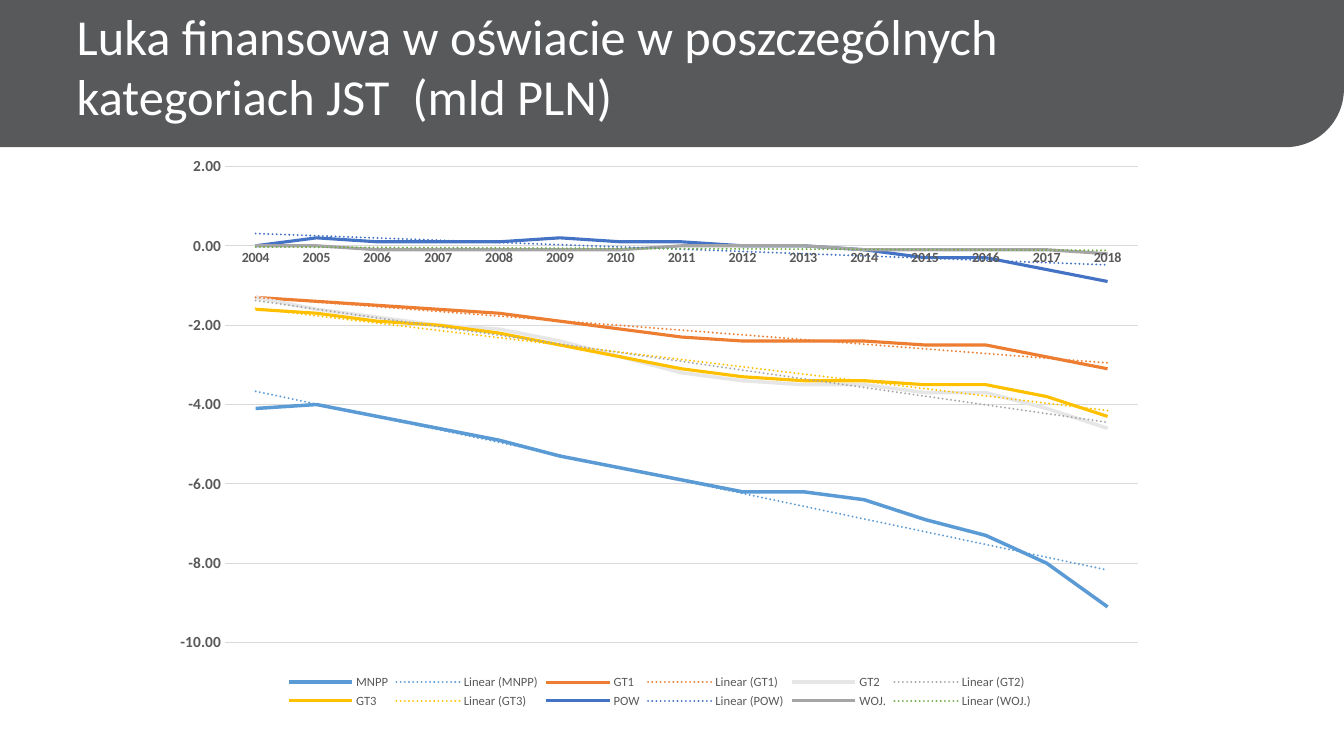
from dataclasses import dataclass

from pptx import Presentation
from pptx.chart.axis import _BaseAxis
from pptx.chart.chart import Chart
from pptx.chart.data import CategoryChartData
from pptx.chart.series import LineSeries
from pptx.dml.color import RGBColor
from pptx.enum.chart import XL_CHART_TYPE, XL_LEGEND_POSITION, XL_MARKER_STYLE, XL_TICK_MARK
from pptx.enum.shapes import MSO_SHAPE
from pptx.enum.text import MSO_ANCHOR, MSO_AUTO_SIZE, PP_ALIGN
from pptx.oxml import parse_xml
from pptx.oxml.ns import nsdecls, qn
from pptx.util import Cm, Pt

LINE_CHART = XL_CHART_TYPE.LINE
NO_MARKER = XL_MARKER_STYLE.NONE
NO_TICK = XL_TICK_MARK.NONE
LEGEND_BOTTOM = XL_LEGEND_POSITION.BOTTOM
BAND_SHAPE = MSO_SHAPE.ROUND_1_RECTANGLE
TOP = MSO_ANCHOR.TOP
LEFT = PP_ALIGN.LEFT
FIXED_SIZE = MSO_AUTO_SIZE.NONE

WHITE = RGBColor(0xFF, 0xFF, 0xFF)
BLACK = RGBColor(0x00, 0x00, 0x00)
SLATE = RGBColor(0x58, 0x59, 0x5B)
LABEL_GRAY = RGBColor(0x59, 0x59, 0x59)
GRID_GRAY = RGBColor(0xD9, 0xD9, 0xD9)
SKY = RGBColor(0x5B, 0x9B, 0xD5)
ORANGE = RGBColor(0xED, 0x7D, 0x31)
PALE_GRAY = RGBColor(0xE7, 0xE6, 0xE6)
MID_GRAY = RGBColor(0xA5, 0xA5, 0xA5)
GOLD = RGBColor(0xFF, 0xC0, 0x00)
BLUE = RGBColor(0x44, 0x72, 0xC4)
GREEN = RGBColor(0x70, 0xAD, 0x47)

FONT = "Calibri"
YEARS = [str(year) for year in range(2004, 2019)]


@dataclass(frozen=True)
class Gap:
    """Financial gap of one category of local government."""
    name: str
    color: RGBColor
    trend_color: RGBColor
    width: float
    values: tuple[float, ...]


GAPS = [
    Gap("MNPP", SKY, SKY, 2.5,
        (-4.1, -4, -4.3, -4.6, -4.9, -5.3, -5.6, -5.9, -6.2, -6.2, -6.4, -6.9, -7.3, -8, -9.1)),
    Gap("GT1", ORANGE, ORANGE, 2.25,
        (-1.3, -1.4, -1.5, -1.6, -1.7, -1.9, -2.1, -2.3, -2.4, -2.4, -2.4, -2.5, -2.5, -2.8, -3.1)),
    Gap("GT2", PALE_GRAY, MID_GRAY, 2.5,
        (-1.3, -1.6, -1.8, -2, -2.1, -2.4, -2.8, -3.2, -3.4, -3.5, -3.5, -3.7, -3.7, -4.1, -4.6)),
    Gap("GT3", GOLD, GOLD, 2.25,
        (-1.6, -1.7, -1.9, -2, -2.2, -2.5, -2.8, -3.1, -3.3, -3.4, -3.4, -3.5, -3.5, -3.8, -4.3)),
    Gap("POW", BLUE, BLUE, 2.25,
        (0, 0.2, 0.1, 0.1, 0.1, 0.2, 0.1, 0.1, 0, 0, -0.1, -0.3, -0.3, -0.6, -0.9)),
    Gap("WOJ.", MID_GRAY, GREEN, 2.25,
        (0, 0, -0.1, -0.1, -0.1, -0.1, -0.1, 0, 0, 0, -0.1, -0.1, -0.1, -0.1, -0.2)),
]


def style_font(font, size: float, color: RGBColor, bold: bool = False) -> None:
    font.name = FONT
    font.size = Pt(size)
    font.bold = bold
    font.color.rgb = color


def style_axis(axis: _BaseAxis, size: float) -> None:
    axis.major_tick_mark = NO_TICK
    axis.minor_tick_mark = NO_TICK
    style_font(axis.tick_labels.font, size, LABEL_GRAY, bold=True)


def draw_gridline(line) -> None:
    line.color.rgb = GRID_GRAY
    line.width = Pt(0.75)


def style_series(series: LineSeries, gap: Gap) -> None:
    series.smooth = False
    series.marker.style = NO_MARKER
    line = series.format.line
    line.color.rgb = gap.color
    line.width = Pt(gap.width)
    trend = parse_xml(
        f'<c:trendline {nsdecls("c", "a")}><c:spPr><a:ln w="{Pt(1.5)}" cap="rnd">'
        f'<a:solidFill><a:srgbClr val="{gap.trend_color}"/></a:solidFill>'
        '<a:prstDash val="sysDot"/></a:ln></c:spPr><c:trendlineType val="linear"/>'
        '<c:dispRSqr val="0"/><c:dispEq val="0"/></c:trendline>')
    series._element.find(qn("c:cat")).addprevious(trend)


def place_plot(chart: Chart, x: float, y: float, w: float, h: float) -> None:
    """Fix the inner plot area, in fractions of the chart."""
    plot_area = chart._chartSpace.find(".//" + qn("c:plotArea"))
    for layout in plot_area.findall(qn("c:layout")):
        plot_area.remove(layout)
    plot_area.insert(0, parse_xml(
        f'<c:layout {nsdecls("c")}><c:manualLayout><c:layoutTarget val="inner"/>'
        '<c:xMode val="edge"/><c:yMode val="edge"/>'
        f'<c:x val="{x}"/><c:y val="{y}"/><c:w val="{w}"/><c:h val="{h}"/>'
        '</c:manualLayout></c:layout>'))


def add_heading(slide) -> None:
    heading = slide.shapes.title
    heading.left, heading.top, heading.width, heading.height = Cm(1.68), Cm(0), Cm(29.6), Cm(3.07)
    frame = heading.text_frame
    frame.word_wrap = True
    frame.auto_size = FIXED_SIZE
    frame.vertical_anchor = TOP
    paragraph = frame.paragraphs[0]
    paragraph.alignment = LEFT
    run = paragraph.add_run()
    run.text = "Luka finansowa w oświacie w poszczególnych kategoriach JST  (mld PLN)"
    style_font(run.font, 36, WHITE)

    # Band behind the heading, rounded at its lower right corner
    band = slide.shapes.add_shape(BAND_SHAPE, Cm(0), Cm(0), Cm(33.87), Cm(3.71))
    band.adjustments[0] = 0.395
    band.shadow.inherit = False
    band.fill.solid()
    band.fill.fore_color.rgb = SLATE
    band.line.fill.background()
    band.element.spPr.get_or_add_xfrm().set("flipV", "1")
    heading.element.addprevious(band.element)


def add_gap_chart(slide) -> None:
    data = CategoryChartData(number_format="#,##0.00")
    data.categories = YEARS
    for gap in GAPS:
        data.add_series(gap.name, gap.values)
    chart = slide.shapes.add_chart(
        LINE_CHART, Cm(4.04), Cm(3.68), Cm(25.17), Cm(14.27), data).chart
    chart.has_title = False
    style_font(chart.font, 10, BLACK)
    place_plot(chart, 0.065, 0.036, 0.914, 0.841)

    # Axes
    style_axis(chart.category_axis, 10)
    draw_gridline(chart.category_axis.format.line)
    amounts = chart.value_axis
    style_axis(amounts, 11)
    amounts.minimum_scale, amounts.maximum_scale, amounts.major_unit = -10, 2, 2
    amounts.tick_labels.number_format = "#,##0.00"
    amounts.tick_labels.number_format_is_linked = False
    amounts.format.line.fill.background()
    draw_gridline(amounts.major_gridlines.format.line)

    # Lines and trends
    plot = chart.plots[0]
    plot.vary_by_categories = False
    for series, gap in zip(plot.series, GAPS):
        style_series(series, gap)

    # Legend
    chart.has_legend = True
    chart.legend.position = LEGEND_BOTTOM
    chart.legend.include_in_layout = False
    style_font(chart.legend.font, 9, LABEL_GRAY)


def main() -> None:
    deck = Presentation()
    deck.slide_width, deck.slide_height = Cm(33.87), Cm(19.05)
    slide = deck.slides.add_slide(deck.slide_layouts.get_by_name("Title Only"))
    add_heading(slide)
    add_gap_chart(slide)
    deck.save("out.pptx")


if __name__ == "__main__":
    main()
